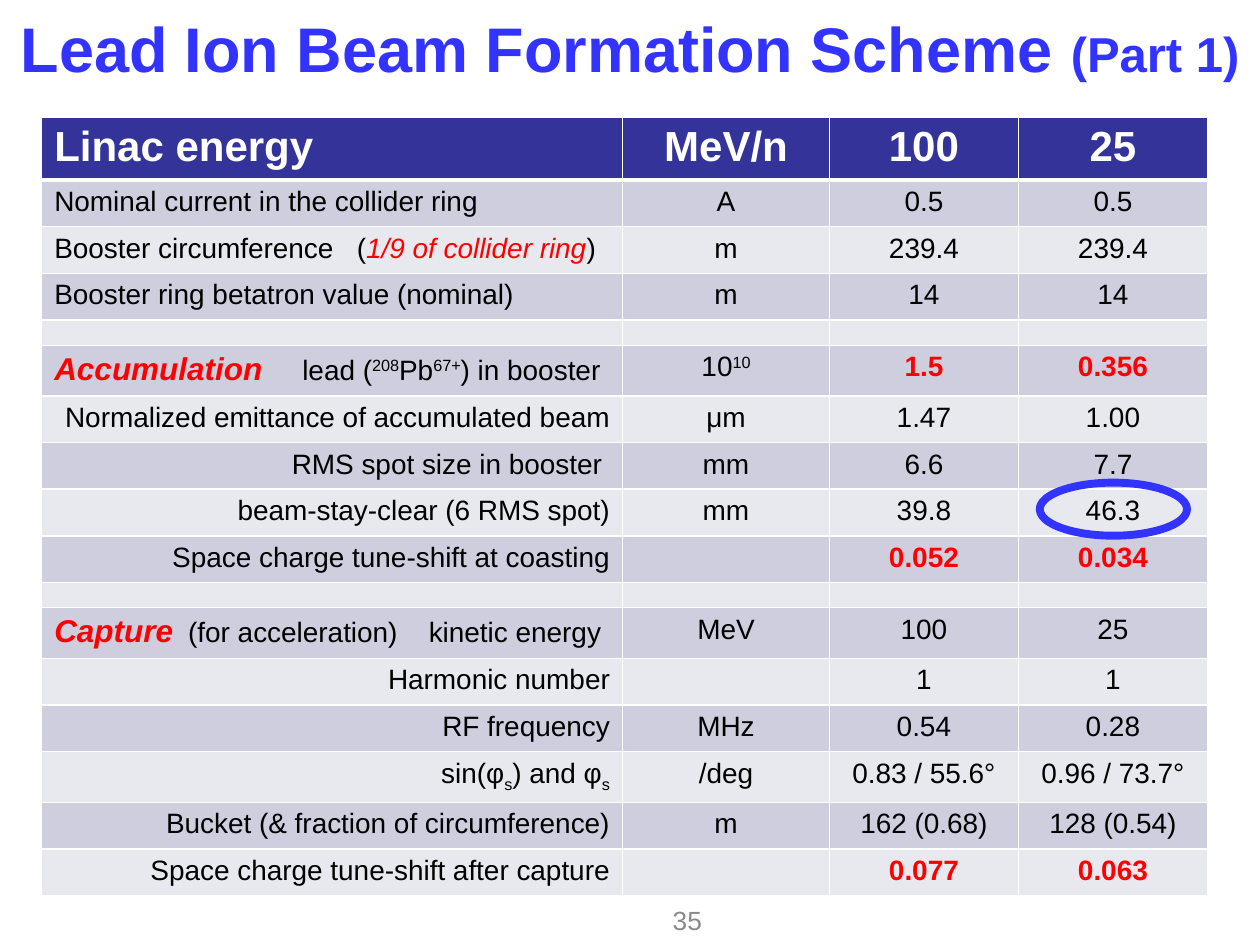
from lxml import etree
from pptx import Presentation
from pptx.dml.color import RGBColor
from pptx.enum.shapes import MSO_SHAPE
from pptx.enum.text import MSO_ANCHOR, PP_ALIGN
from pptx.oxml.ns import qn
from pptx.util import Cm, Pt

LEFT, CENTER, RIGHT = PP_ALIGN.LEFT, PP_ALIGN.CENTER, PP_ALIGN.RIGHT
MIDDLE = MSO_ANCHOR.MIDDLE
ELLIPSE = MSO_SHAPE.OVAL

BLUE = RGBColor(0x33, 0x33, 0xFF)
NAVY = RGBColor(0x33, 0x33, 0x99)
DARK_BAND = RGBColor(0xCE, 0xCE, 0xDE)
LIGHT_BAND = RGBColor(0xE8, 0xE8, 0xEF)
RED = RGBColor(0xFF, 0x00, 0x00)
BLACK = RGBColor(0x00, 0x00, 0x00)
WHITE = RGBColor(0xFF, 0xFF, 0xFF)
GRAY = RGBColor(0x89, 0x89, 0x89)


def write(p, text, size=16, color=BLACK, bold=False, italic=False, base=0):
    """Add a run to p; base is the baseline shift in percent."""
    r = p.add_run()
    r.text = text
    r.font.name = "Arial"
    r.font.size = Pt(size)
    r.font.color.rgb = color
    r.font.bold = bold
    r.font.italic = italic
    if base:
        r.font._element.set("baseline", str(base * 1000))


def add_border(cell, side, width):
    ln = etree.SubElement(cell._tc.get_or_add_tcPr(), qn(f"a:ln{side}"), w=str(Pt(width)))
    fill = etree.SubElement(ln, qn("a:solidFill"))
    etree.SubElement(fill, qn("a:srgbClr"), val=str(WHITE))


prs = Presentation()
prs.slide_width, prs.slide_height = Cm(25.4), Cm(19.05)
s = prs.slides.add_slide(prs.slide_layouts[6])

# Title
tf = s.shapes.add_textbox(0, 0, Cm(25.4), Cm(1.9)).text_frame
tf.word_wrap = True
tf.vertical_anchor = MIDDLE
p = tf.paragraphs[0]
p.alignment = CENTER
write(p, "Lead Ion Beam Formation Scheme ", size=36, color=BLUE, bold=True)
write(p, "(Part 1)", size=28, color=BLUE, bold=True)

# Page number
tf = s.shapes.add_textbox(Cm(10.59), Cm(18.03), Cm(3.81), Cm(1.02)).text_frame
tf.word_wrap = True
tf.vertical_anchor = MIDDLE
p = tf.paragraphs[0]
p.alignment = RIGHT
write(p, "35", size=15, color=GRAY)

# Labels made of several runs
SUP, SUB = {"base": 30}, {"base": -25}
HEADING = {"size": 18, "color": RED, "bold": True, "italic": True}
circumference = [("Booster circumference\t(", {}),
                 ("1/9 of collider ring", {"color": RED, "italic": True}), (")", {})]
accumulation = [("Accumulation", HEADING), ("\tlead (", {}), ("208", SUP), ("Pb", {}),
                ("67+", SUP), (") in booster", {})]
capture = [("Capture", HEADING), ("\t(for acceleration)\tkinetic energy", {})]
phase = [("sin(φ", {}), ("s", SUB), (") and φ", {}), ("s", SUB)]
ten_to_ten = [("10", {}), ("10", SUP)]

NORMAL, SPACER, SECTION = 0.94, 0.51, 1.02
blank = (SPACER, LEFT, {}, ["", "", "", ""])
VALUE = {"color": RED, "bold": True}

# Height, label alignment, value format, cells
rows = [
    (1.27, LEFT, {}, ["Linac energy", "MeV/n", "100", "25"]),
    (NORMAL, LEFT, {}, ["Nominal current in the collider ring", "A", "0.5", "0.5"]),
    (NORMAL, LEFT, {}, [circumference, "m", "239.4", "239.4"]),
    (NORMAL, LEFT, {}, ["Booster ring betatron value (nominal)", "m", "14", "14"]),
    blank,
    (SECTION, LEFT, VALUE, [accumulation, ten_to_ten, "1.5", "0.356"]),
    (NORMAL, RIGHT, {}, ["Normalized emittance of accumulated beam", "μm", "1.47", "1.00"]),
    (NORMAL, RIGHT, {}, ["RMS spot size in booster ", "mm", "6.6", "7.7"]),
    (NORMAL, RIGHT, {}, ["beam-stay-clear (6 RMS spot)", "mm", "39.8", "46.3"]),
    (NORMAL, RIGHT, VALUE, ["Space charge tune-shift at coasting", "", "0.052", "0.034"]),
    blank,
    (SECTION, LEFT, {}, [capture, "MeV", "100", "25"]),
    (NORMAL, RIGHT, {}, ["Harmonic number", "", "1", "1"]),
    (NORMAL, RIGHT, {}, ["RF frequency", "MHz", "0.54", "0.28"]),
    (NORMAL, RIGHT, {}, [phase, "/deg", "0.83 / 55.6°", "0.96 / 73.7°"]),
    (NORMAL, RIGHT, {}, ["Bucket (& fraction of circumference)", "m",
                         "162 (0.68)", "128 (0.54)"]),
    (NORMAL, RIGHT, VALUE, ["Space charge tune-shift after capture", "", "0.077", "0.063"]),
]
tab_stops = {2: [6.1], 5: [5], 11: [2.7, 7.55]}  # row: positions in cm
widths = [11.71, 4.17, 3.81, 3.81]

table = s.shapes.add_table(len(rows), len(widths), Cm(0.84), Cm(2.36),
                           Cm(sum(widths)), Cm(sum(row[0] for row in rows))).table
for column, width in zip(table.columns, widths):
    column.width = Cm(width)

for i, (height, label_align, value_format, cells) in enumerate(rows):
    table.rows[i].height = Cm(height)
    for j, content in enumerate(cells):
        cell = table.cell(i, j)
        for side in "LRTB":
            under_header = (i, side) in ((0, "B"), (1, "T"))
            add_border(cell, side, 3 if under_header else 1)
        cell.fill.solid()
        cell.fill.fore_color.rgb = (NAVY if i == 0 else DARK_BAND if i % 2 else LIGHT_BAND)

        p = cell.text_frame.paragraphs[0]
        p.alignment = label_align if j == 0 else CENTER
        if j == 0 and i in tab_stops:
            tabs = etree.SubElement(p._p.get_or_add_pPr(), qn("a:tabLst"))
            for pos in tab_stops[i]:
                etree.SubElement(tabs, qn("a:tab"), pos=str(Cm(pos)), algn="l")
        if i == 0:
            write(p, content, size=24, color=WHITE, bold=True)
        elif not content:
            size = 5 if height == SPACER else 16
            etree.SubElement(p._p, qn("a:endParaRPr"), sz=str(size * 100))
        elif isinstance(content, str):
            write(p, content, **(value_format if j > 1 else {}))
        else:
            for text, run_format in content:
                write(p, text, **run_format)

# Ring around the 46.3 mm value
ring = s.shapes.add_shape(ELLIPSE, Cm(20.96), Cm(9.73), Cm(2.97), Cm(1.07))
ring.shadow.inherit = False
ring.fill.background()
ring.line.color.rgb = BLUE
ring.line.width = Pt(4.5)

prs.save("out.pptx")
